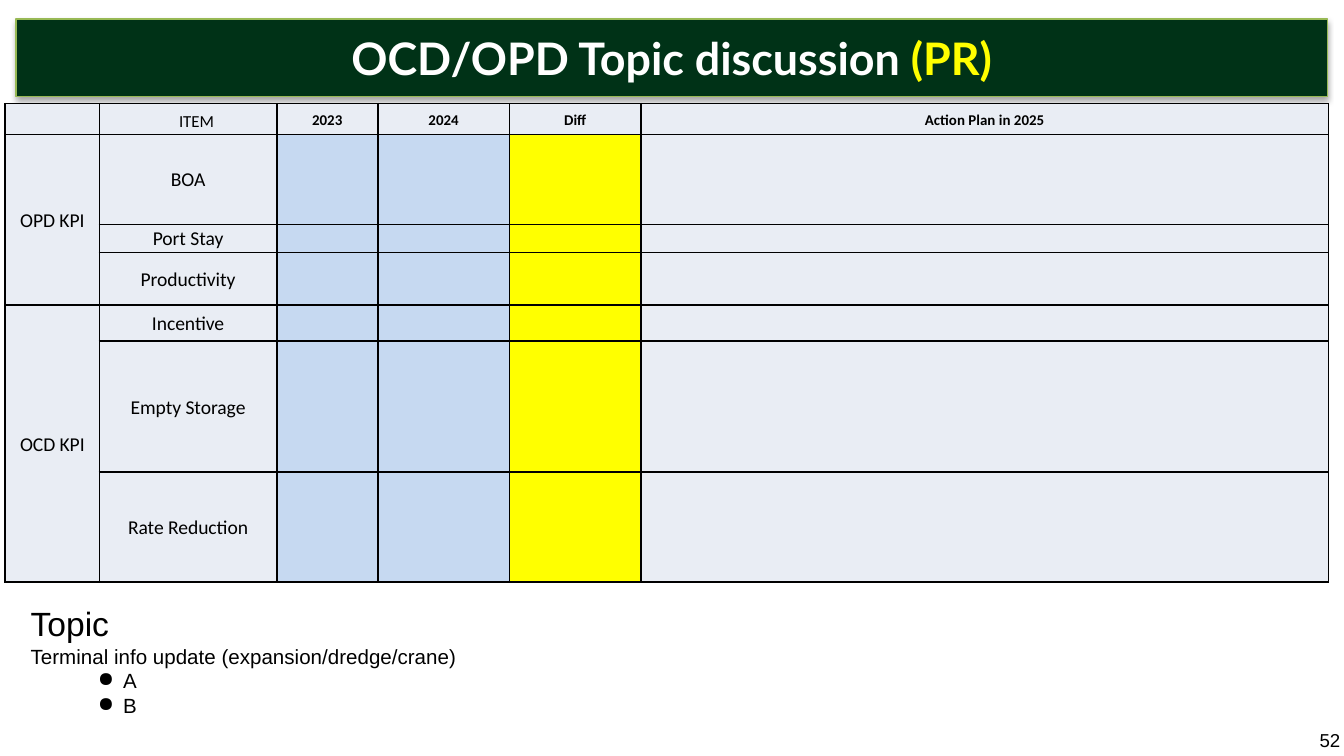
from lxml import etree
from pptx import Presentation
from pptx.dml.color import RGBColor
from pptx.enum.shapes import MSO_SHAPE
from pptx.enum.text import MSO_ANCHOR, MSO_AUTO_SIZE, PP_ALIGN
from pptx.oxml import parse_xml
from pptx.oxml.ns import nsdecls, qn
from pptx.util import Cm, Pt

RECT = MSO_SHAPE.RECTANGLE
MIDDLE, TOP = MSO_ANCHOR.MIDDLE, MSO_ANCHOR.TOP
CENTER = PP_ALIGN.CENTER
FIT_SHAPE = MSO_AUTO_SIZE.SHAPE_TO_FIT_TEXT

BLACK = RGBColor(0x00, 0x00, 0x00)
WHITE = RGBColor(0xFF, 0xFF, 0xFF)
YELLOW = RGBColor(0xFF, 0xFF, 0x00)
DARK_GREEN = RGBColor(0x00, 0x32, 0x17)
LIGHT_GREEN = RGBColor(0x98, 0xB9, 0x55)
PALE_GREY = RGBColor(0xE9, 0xED, 0xF4)
PALE_BLUE = RGBColor(0xC6, 0xD9, 0xF1)

HEADERS = ["", "\N{IDEOGRAPHIC SPACE}ITEM".replace("\N{IDEOGRAPHIC SPACE}", "　"),
           "2023", "2024", "Diff", "Action Plan in 2025"]
GROUPS = {
    "OPD KPI": ["BOA", "Port Stay", "Productivity"],
    "OCD KPI": ["Incentive", "Empty Storage", "Rate Reduction"],
}
COL_WIDTHS = [1.78, 3.35, 1.91, 2.49, 2.48, 13]
ROW_HEIGHTS = [0.58, 1.7, 0.53, 1, 0.68, 2.47, 2.08]
BODY_FILLS = [PALE_GREY, PALE_GREY, PALE_BLUE, PALE_BLUE, YELLOW, PALE_GREY]

HEADER_FONT = {"name": "Calibri", "size": Pt(8), "bold": True}
ITEM_FONT = {"name": "Calibri", "size": Pt(9), "bold": False}
BODY_FONT = {"name": "Calibri", "size": Pt(10.5), "bold": False}
CELL_MARGINS = {"margin_left": Cm(0.03), "margin_right": Cm(0.03),
                "margin_top": Cm(0.03), "margin_bottom": 0}


def set_attrs(obj, values):
    """Set each named attribute of an object."""
    for name, value in values.items():
        setattr(obj, name, value)


def add_run(p, text, font, color=BLACK):
    """Add a formatted run to a paragraph."""
    r = p.add_run()
    r.text = text
    set_attrs(r.font, font)
    r.font.color.rgb = color


def add_banner(s):
    """Draw the title banner with its soft shadow."""
    sp = s.shapes.add_shape(RECT, Cm(0.3), Cm(0.36), Cm(24.79), Cm(1.47))
    sp.fill.solid()
    sp.fill.fore_color.rgb = DARK_GREEN
    sp.line.color.rgb = LIGHT_GREEN
    sp.line.width = Pt(0.75)
    sp.shadow.inherit = False
    effects = sp._element.spPr.find(qn("a:effectLst"))
    effects.append(parse_xml(
        f'<a:outerShdw {nsdecls("a")} blurRad="{Pt(3.1)}" dist="{Pt(1.8)}" '
        'dir="5400000" rotWithShape="0"><a:srgbClr val="000000">'
        '<a:alpha val="35000"/></a:srgbClr></a:outerShdw>'))
    tf = sp.text_frame
    set_attrs(tf, {"margin_left": 0, "margin_right": 0, "margin_top": 0,
                   "margin_bottom": 0, "vertical_anchor": MIDDLE, "word_wrap": True})
    p = tf.paragraphs[0]
    p.alignment = CENTER
    font = {"name": "Lato", "size": Pt(24), "bold": True}
    add_run(p, "OCD/OPD Topic discussion ", font, WHITE)
    add_run(p, "(PR)", font, YELLOW)


def add_borders(cell):
    """Give a cell thin black borders on all sides."""
    tc_pr = cell._tc.get_or_add_tcPr()
    for side in ("lnL", "lnR", "lnT", "lnB"):
        tc_pr.append(parse_xml(
            f'<a:{side} {nsdecls("a")} w="{Pt(1)}"><a:solidFill>'
            f'<a:srgbClr val="{BLACK}"/></a:solidFill></a:{side}>'))


def format_cell(cell, text, font, fill):
    """Fill, border and label one table cell."""
    add_borders(cell)
    cell.fill.solid()
    cell.fill.fore_color.rgb = fill
    set_attrs(cell, {**CELL_MARGINS, "vertical_anchor": MIDDLE})
    p = cell.text_frame.paragraphs[0]
    p.alignment = CENTER
    if text:
        add_run(p, text, font)
    else:
        etree.SubElement(p._p, qn("a:endParaRPr"), sz="800")


def add_kpi_table(s):
    """Build the KPI table with its merged group cells."""
    rows, cols = len(ROW_HEIGHTS), len(COL_WIDTHS)
    table = s.shapes.add_table(rows, cols, Cm(0.1), Cm(1.96),
                               Cm(sum(COL_WIDTHS)), Cm(sum(ROW_HEIGHTS))).table
    set_attrs(table, {"first_row": False, "horz_banding": False})
    for col, width in zip(table.columns, COL_WIDTHS):
        col.width = Cm(width)
    for row, height in zip(table.rows, ROW_HEIGHTS):
        row.height = Cm(height)
    for c, text in enumerate(HEADERS):
        font = ITEM_FONT if c == 1 else HEADER_FONT
        format_cell(table.cell(0, c), text, font, PALE_GREY)
    r = 1
    for group, items in GROUPS.items():
        table.cell(r, 0).merge(table.cell(r + len(items) - 1, 0))
        for i, item in enumerate(items):
            labels = [group if i == 0 else "", item] + [""] * (cols - 2)
            for c, text in enumerate(labels):
                format_cell(table.cell(r, c), text, BODY_FONT, BODY_FILLS[c])
            r += 1


def add_text(s, left, top, width, height, lines, anchor=TOP):
    """Add a text box from (text, size, bulleted) lines."""
    tf = s.shapes.add_textbox(Cm(left), Cm(top), Cm(width), Cm(height)).text_frame
    set_attrs(tf, {"word_wrap": True, "vertical_anchor": anchor})
    for i, (text, size, bulleted) in enumerate(lines):
        p = tf.add_paragraph() if i else tf.paragraphs[0]
        add_run(p, text, {"name": "Arial", "size": Pt(size)})
        if bulleted:
            p.level = 1
            p_pr = p._p.get_or_add_pPr()
            p_pr.set("marL", str(Cm(1.75)))
            p_pr.set("indent", str(Cm(-0.48)))
            etree.SubElement(p_pr, qn("a:buChar"), char="●")
    return tf


def main():
    """Build and save the slide."""
    prs = Presentation()
    prs.slide_width, prs.slide_height = Cm(25.4), Cm(14.29)
    s = prs.slides.add_slide(prs.slide_layouts[6])
    add_banner(s)
    add_kpi_table(s)
    add_text(s, 24.69, 13.69, 1.63, 0.58, [("52", 10, False)], MIDDLE)
    tf = add_text(s, 0.33, 11.28, 24.79, 3.38, [
        ("Topic", 18, False),
        ("Terminal info update (expansion/dredge/crane)", 11, False),
        ("A", 11, True),
        ("B", 11, True),
    ])
    tf.auto_size = FIT_SHAPE
    prs.save("out.pptx")


if __name__ == "__main__":
    main()
